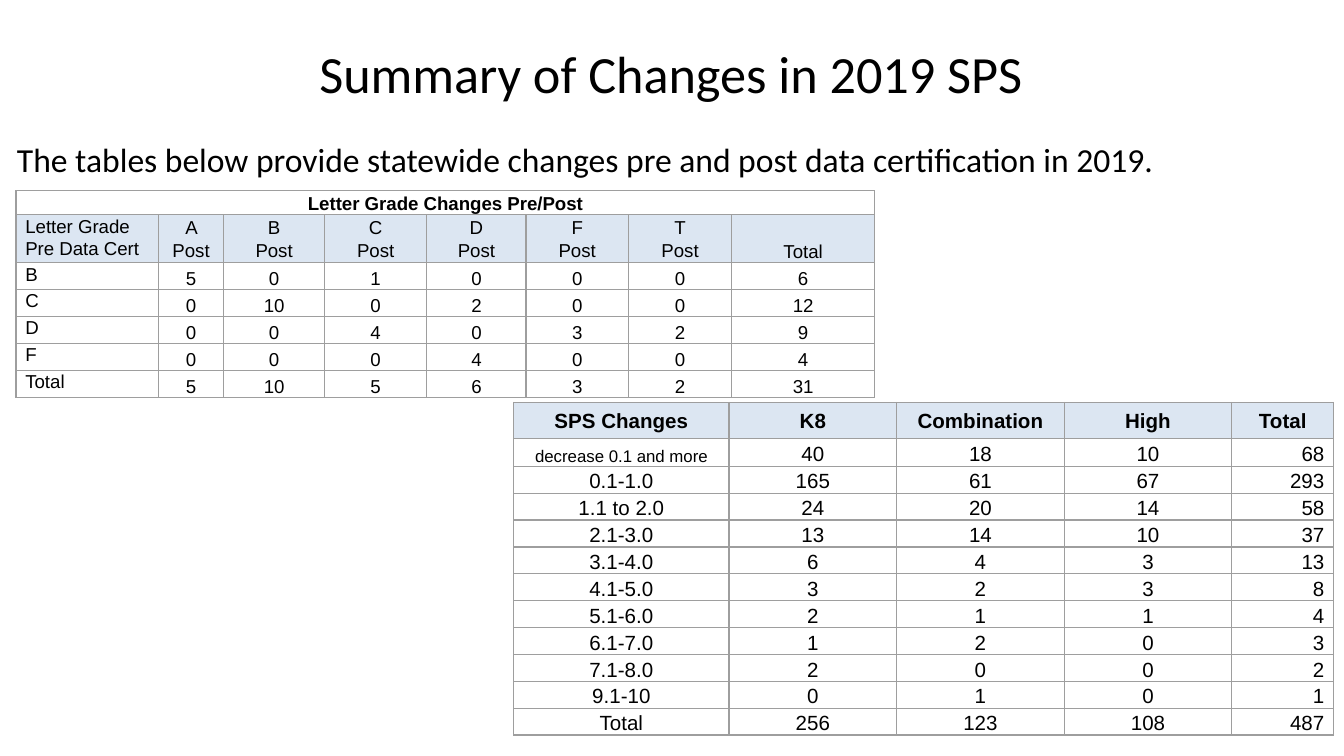
from lxml import etree
from pptx import Presentation
from pptx.dml.color import RGBColor
from pptx.enum.text import MSO_ANCHOR, PP_ALIGN
from pptx.oxml.ns import qn
from pptx.util import Pt

BLACK = RGBColor(0x00, 0x00, 0x00)
HEADER_BLUE = RGBColor(0xDC, 0xE6, 0xF2)
BORDER_GREY = RGBColor(0x9E, 0x9E, 0x9E)
LEFT, CENTER, RIGHT = PP_ALIGN.LEFT, PP_ALIGN.CENTER, PP_ALIGN.RIGHT
TOP, MIDDLE, BOTTOM = MSO_ANCHOR.TOP, MSO_ANCHOR.MIDDLE, MSO_ANCHOR.BOTTOM

GRADE_ROWS = [
    ["Letter Grade Changes Pre/Post"] + [""] * 7,
    ["Letter Grade Pre Data Cert", "A Post"]
    + [f"{grade}\nPost" for grade in "BCDFT"] + ["Total"],
    ["B", 5, 0, 1, 0, 0, 0, 6],
    ["C", 0, 10, 0, 2, 0, 0, 12],
    ["D", 0, 0, 4, 0, 3, 2, 9],
    ["F", 0, 0, 0, 4, 0, 0, 4],
    ["Total", 5, 10, 5, 6, 3, 2, 31],
]
SPS_ROWS = [
    ["SPS Changes", "K8", "Combination", "High", "Total"],
    ["decrease 0.1 and more", 40, 18, 10, 68],
    ["0.1-1.0", 165, 61, 67, 293],
    ["1.1 to 2.0", 24, 20, 14, 58],
    ["2.1-3.0", 13, 14, 10, 37],
    ["3.1-4.0", 6, 4, 3, 13],
    ["4.1-5.0", 3, 2, 3, 8],
    ["5.1-6.0", 2, 1, 1, 4],
    ["6.1-7.0", 1, 2, 0, 3],
    ["7.1-8.0", 2, 0, 0, 2],
    ["9.1-10", 0, 1, 0, 1],
    ["Total", 256, 123, 108, 487],
]


def set_font(para, name, size, bold=False):
    para.font.name = name
    para.font.size = Pt(size)
    para.font.bold = bold
    para.font.color.rgb = BLACK


def add_text(slide, text, left, top, width, height, size, align, anchor):
    box = slide.shapes.add_textbox(Pt(left), Pt(top), Pt(width), Pt(height))
    frame = box.text_frame
    frame.word_wrap = True
    frame.vertical_anchor = anchor
    frame.margin_left = frame.margin_right = Pt(7.2)
    frame.margin_top = frame.margin_bottom = Pt(7.2)
    para = frame.paragraphs[0]
    para.text = text
    para.alignment = align
    set_font(para, "Calibri", size)


def add_borders(cell):
    properties = cell._tc.get_or_add_tcPr()
    for side in ("lnL", "lnR", "lnT", "lnB"):
        line = etree.SubElement(properties, qn(f"a:{side}"), w=str(Pt(0.75)))
        fill = etree.SubElement(line, qn("a:solidFill"))
        etree.SubElement(fill, qn("a:srgbClr"), val=str(BORDER_GREY))


def style_cell(cell, size, align, anchor, bold=False, shaded=False):
    cell.margin_left = cell.margin_right = Pt(5)
    cell.margin_top = cell.margin_bottom = Pt(0)
    cell.vertical_anchor = anchor
    add_borders(cell)
    if shaded:
        cell.fill.solid()
        cell.fill.fore_color.rgb = HEADER_BLUE
    else:
        cell.fill.background()
    for para in cell.text_frame.paragraphs:
        para.alignment = align
        para.line_spacing = 1.07
        set_font(para, "Arial", size, bold)


def add_grid(slide, rows, left, top, widths, heights, cell_style):
    """Add a table; cell_style(row, column) gives the style_cell arguments."""
    table = slide.shapes.add_table(
        len(rows), len(widths), Pt(left), Pt(top),
        Pt(sum(widths)), Pt(sum(heights))).table
    table.first_row = table.horz_banding = False
    for column, width in zip(table.columns, widths):
        column.width = Pt(width)
    for row, height in zip(table.rows, heights):
        row.height = Pt(height)
    for r, values in enumerate(rows):
        for c, value in enumerate(values):
            cell = table.cell(r, c)
            cell.text = str(value)
            style_cell(cell, **cell_style(r, c))
    return table


def grade_style(row, column):
    style = {"size": 10, "align": CENTER, "anchor": BOTTOM,
             "bold": row == 0, "shaded": row == 1}
    if row > 0 and column == 0:
        style.update(align=LEFT, anchor=TOP)
    elif row == 1 and column < 7:
        style["anchor"] = MIDDLE
    return style


def sps_style(row, column):
    header = row == 0
    return {"size": 9 if (row, column) == (1, 0) else 11,
            "align": RIGHT if column == 4 and not header else CENTER,
            "anchor": MIDDLE if header else BOTTOM,
            "bold": header, "shaded": header}


def main():
    deck = Presentation()
    deck.slide_width, deck.slide_height = Pt(720), Pt(405)
    slide = deck.slides.add_slide(deck.slide_layouts[6])

    add_text(slide, "Summary of Changes in 2019 SPS",
             35.3, 5, 648, 67.7, 28, CENTER, MIDDLE)
    add_text(slide, "The tables below provide statewide changes pre and post "
             "data certification in 2019.", 2, 67, 675, 40, 18, LEFT, TOP)

    grades = add_grid(slide, GRADE_ROWS, 8.6, 102.2,
                      [76.3, 35, 54, 54.8, 53.2, 54.8, 55.4, 76.5],
                      [11.8, 24.4] + [14.4] * 5, grade_style)
    grades.cell(0, 0).merge(grades.cell(0, 7))

    add_grid(slide, SPS_ROWS, 275.2, 215.6, [115.4, 89.8, 89.8, 89.8, 54.6],
             [19.2, 15] + [14.4] * 10, sps_style)

    deck.save("out.pptx")


if __name__ == "__main__":
    main()
